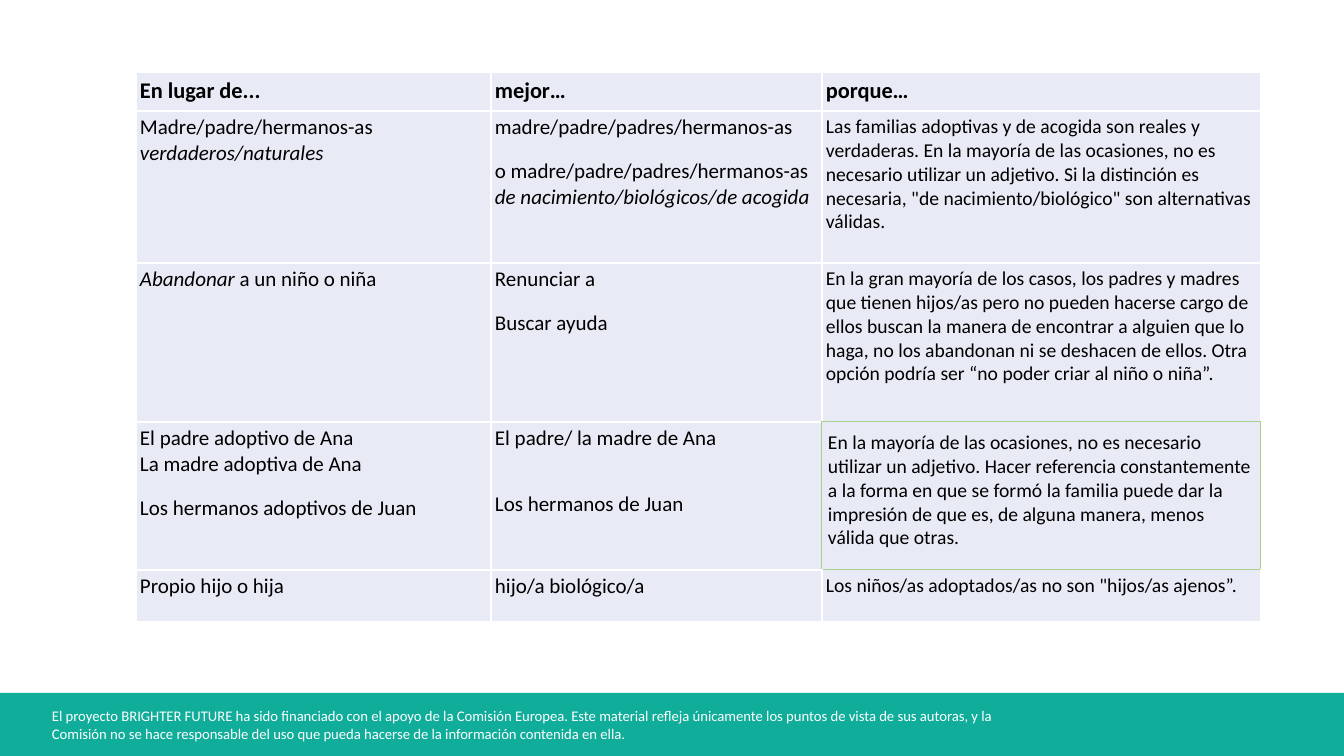
from lxml.etree import SubElement
from pptx import Presentation
from pptx.dml.color import RGBColor
from pptx.enum.shapes import MSO_SHAPE
from pptx.oxml import parse_xml
from pptx.oxml.ns import nsdecls
from pptx.util import Pt

EMU_PER_PX = 12192000 / 1344
COLORS = {"band": "10AD9A", "white": "FFFFFF", "black": "000000",
          "cell": "E8EBF5", "accent": "A8D08D"}
FONT = "Calibri"

COLUMNS = [355, 331, 439]
ROWS = [39, 152, 159, 148, 52]
ACCENT_CELL = (3, 2)

# Each cell is a list of paragraphs; a tuple adds the space before it in points.
# Asterisks enclose italics.
PHRASES = [
    [["En lugar de..."], ["mejor…"], ["porque…"]],
    [["Madre/padre/hermanos-as *verdaderos/naturales*"],
     ["madre/padre/padres/hermanos-as",
      (13, "o madre/padre/padres/hermanos-as"),
      "*de nacimiento/biológicos/de acogida*"],
     ["Las familias adoptivas y de acogida son reales y verdaderas. En la mayoría "
      "de las ocasiones, no es necesario utilizar un adjetivo. Si la distinción es "
      "necesaria, \"de nacimiento/biológico\" son alternativas válidas."]],
    [["*Abandonar* a un niño o niña"],
     ["Renunciar a", (13, "Buscar ayuda")],
     ["En la gran mayoría de los casos, los padres y madres que tienen hijos/as "
      "pero no pueden hacerse cargo de ellos buscan la manera de encontrar a "
      "alguien que lo haga, no los abandonan ni se deshacen de ellos. Otra opción "
      "podría ser “no poder criar al niño o niña”."]],
    [["El padre adoptivo de Ana", "La madre adoptiva de Ana",
      (13, "Los hermanos adoptivos de Juan")],
     ["El padre/ la madre de Ana", (28.5, "Los hermanos de Juan")],
     ["En la mayoría de las ocasiones, no es necesario utilizar un adjetivo. Hacer "
      "referencia constantemente a la forma en que se formó la familia puede dar la "
      "impresión de que es, de alguna manera, menos válida que otras."]],
    [["Propio hijo o hija"], ["hijo/a biológico/a"],
     ["Los niños/as adoptados/as no son \"hijos/as ajenos”."]],
]
FUNDING = ("El proyecto BRIGHTER FUTURE ha sido financiado con el apoyo de la Comisión "
           "Europea. Este material refleja únicamente los puntos de vista de sus "
           "autoras, y la Comisión no se hace responsable del uso que pueda hacerse "
           "de la información contenida en ella.")


def px(length):
    return round(length * EMU_PER_PX)


def rgb(name):
    return RGBColor.from_string(COLORS[name])


def set_margins(holder, across, down):
    holder.margin_left = holder.margin_right = px(across)
    holder.margin_top = holder.margin_bottom = px(down)


def write(frame, paragraphs, size, color="black", bold=False):
    frame.word_wrap = True
    for index, entry in enumerate(paragraphs):
        gap, text = entry if isinstance(entry, tuple) else (0, entry)
        paragraph = frame.add_paragraph() if index else frame.paragraphs[0]
        if gap:
            paragraph.space_before = Pt(gap)
        for part, words in enumerate(text.split("*")):
            if not words:
                continue
            run = paragraph.add_run()
            run.text = words
            run.font.name = FONT
            run.font.size = Pt(size)
            run.font.bold = bold
            run.font.italic = part % 2 == 1
            run.font.color.rgb = rgb(color)


def set_borders(cell, row, column):
    """Outline the accent cell in green, including its neighbours' shared edges."""
    neighbours = {"lnL": (row, column - 1), "lnR": (row, column + 1),
                  "lnT": (row - 1, column), "lnB": (row + 1, column)}
    properties = cell._tc.get_or_add_tcPr()
    for place, (edge, neighbour) in enumerate(neighbours.items()):
        accented = ACCENT_CELL in ((row, column), neighbour)
        color, width = ("accent", 0.83) if accented else ("white", 1)
        line = parse_xml(f'<a:{edge} {nsdecls("a")} w="{int(Pt(width))}"><a:solidFill>'
                         f'<a:srgbClr val="{COLORS[color]}"/></a:solidFill></a:{edge}>')
        properties.insert(place, line)


def add_phrase_table(slide, left, top):
    table = slide.shapes.add_table(len(ROWS), len(COLUMNS), px(left), px(top),
                                   px(sum(COLUMNS)), px(sum(ROWS))).table
    table.first_row = table.horz_banding = False
    for column, width in zip(table.columns, COLUMNS):
        column.width = px(width)
    for row, height in zip(table.rows, ROWS):
        row.height = px(height)

    for r, phrases in enumerate(PHRASES):
        for c, paragraphs in enumerate(phrases):
            cell = table.cell(r, c)
            cell.fill.solid()
            cell.fill.fore_color.rgb = rgb("cell")
            set_borders(cell, r, c)
            if (r, c) == ACCENT_CELL:
                set_margins(cell, 6, 9)
            else:
                set_margins(cell, 4, 4 if r else 5)
            size = 16 if r == 0 else 14 if c == 2 else 15
            write(cell.text_frame, paragraphs, size, bold=r == 0)


def add_footer(slide, left, top, width, height):
    # Coloured band
    band = slide.shapes.add_shape(MSO_SHAPE.RECTANGLE, px(left), px(top),
                                  px(width), px(height))
    band.shadow.inherit = False
    band.fill.solid()
    band.fill.fore_color.rgb = rgb("band")
    band.line.fill.background()

    # Funding statement
    statement = slide.shapes.add_textbox(px(left + 42), px(top + 9), px(1008), px(45))
    set_margins(statement.text_frame, 10, 5)
    write(statement.text_frame, [FUNDING], 10.5, color="white")


def main():
    deck = Presentation()
    deck.slide_width, deck.slide_height = px(1344), px(756)
    slide = deck.slides.add_slide(deck.slide_layouts[6])
    add_footer(slide, 0, 693, 1344, 63)
    add_phrase_table(slide, 136, 72)
    deck.save("out.pptx")


if __name__ == "__main__":
    main()
